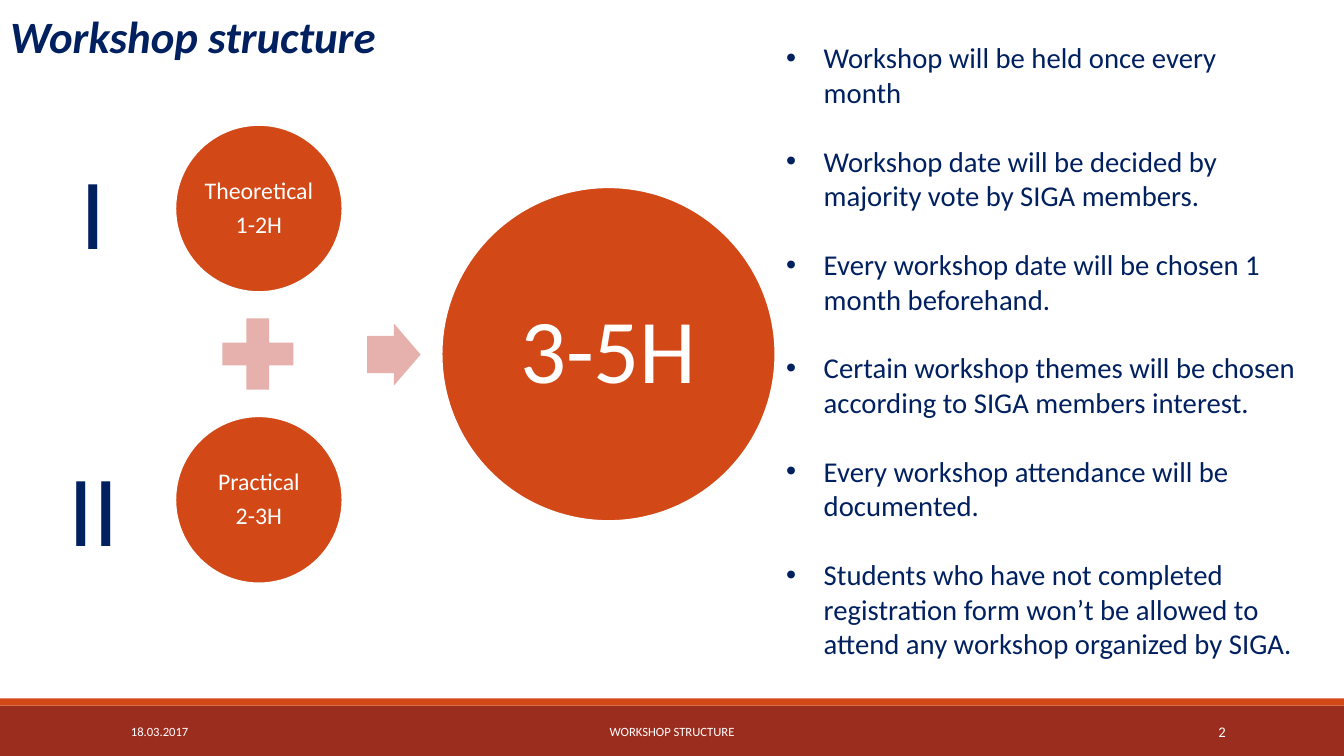
from lxml.etree import SubElement
from pptx import Presentation
from pptx.dml.color import RGBColor
from pptx.enum.shapes import MSO_SHAPE
from pptx.enum.text import MSO_ANCHOR, PP_ALIGN
from pptx.oxml.ns import qn
from pptx.util import Cm, Pt

NAVY, ORANGE, BRICK, PINK, WHITE = "002060", "D34817", "9B2D1F", "E6B1AC", "FFFFFF"
WIDTH, HEIGHT = 33.87, 19.05

PARTS = [("I", "Theoretical", "1-2H"), ("II", "Practical", "2-3H")]
RULES = [
    "Workshop will be held once every month",
    "Workshop date will be decided by majority vote by SIGA members.",
    "Every workshop date will be chosen 1 month beforehand.",
    "Certain workshop themes will be chosen according to SIGA members interest.",
    "Every workshop attendance will be documented.",
    "Students who have not completed registration form won’t be allowed to "
    "attend any workshop organized by SIGA.",
]
FOOTER = [
    ("18.03.2017", 3.05, 6.86, 9, PP_ALIGN.LEFT),
    ("WORKSHOP STRUCTURE", 10.24, 13.39, 9, PP_ALIGN.CENTER),
    ("2", 27.51, 3.63, 10.5, PP_ALIGN.RIGHT),
]


def color(value):
    return RGBColor.from_string(value)


def add_bullet(para, indent):
    properties = para._p.get_or_add_pPr()
    properties.set("marL", str(Cm(indent)))
    properties.set("indent", str(-Cm(indent)))
    SubElement(properties, qn("a:buFont"), typeface="Arial")
    SubElement(properties, qn("a:buChar"), char="•")


def write(frame, lines, size, ink=NAVY, align=PP_ALIGN.LEFT, anchor=MSO_ANCHOR.TOP,
          bold=False, italic=False, spacing=1.0, gap=0, indent=None, inset=None):
    """Fill a text frame with one paragraph per line; gap is the points between them."""
    frame.word_wrap = True
    frame.vertical_anchor = anchor
    if inset is not None:
        frame.margin_left = frame.margin_right = Cm(inset)
        frame.margin_top = frame.margin_bottom = Cm(inset)
    for index, line in enumerate(lines):
        para = frame.paragraphs[0] if index == 0 else frame.add_paragraph()
        para.alignment = align
        para.line_spacing = spacing
        para.space_before = Pt(gap if index else 0)
        if indent:
            add_bullet(para, indent)
        span = para.add_run()
        span.text = line
        span.font.name = "Calibri"
        span.font.size = Pt(size)
        span.font.bold = bold
        span.font.italic = italic
        span.font.color.rgb = color(ink)


class Page:
    def __init__(self, deck):
        self.slide = deck.slides.add_slide(deck.slide_layouts[5])

    def title(self, text, left, top, width, height):
        box = self.slide.shapes.title
        box.left, box.top, box.width, box.height = map(Cm, (left, top, width, height))
        write(box.text_frame, [text], 32, bold=True, italic=True)

    def text(self, lines, left, top, width, height, size, **style):
        box = self.slide.shapes.add_textbox(*map(Cm, (left, top, width, height)))
        write(box.text_frame, lines, size, **style)

    def shape(self, kind, left, top, width, height, fill):
        shape = self.slide.shapes.add_shape(kind, *map(Cm, (left, top, width, height)))
        shape.shadow.inherit = False
        shape.fill.solid()
        shape.fill.fore_color.rgb = color(fill)
        shape.line.fill.background()
        return shape

    def circle(self, lines, left, top, diameter, size, inset):
        circle = self.shape(MSO_SHAPE.OVAL, left, top, diameter, diameter, ORANGE)
        circle.line.color.rgb = color(WHITE)
        circle.line.width = Pt(1.25)
        write(circle.text_frame, lines, size, ink=WHITE, align=PP_ALIGN.CENTER,
              anchor=MSO_ANCHOR.MIDDLE, spacing=0.9, gap=0.35 * size, inset=inset)


def main():
    deck = Presentation()
    deck.slide_width, deck.slide_height = Cm(WIDTH), Cm(HEIGHT)
    page = Page(deck)

    page.shape(MSO_SHAPE.RECTANGLE, 0, 17.78, WIDTH, 1.27, BRICK)
    page.shape(MSO_SHAPE.RECTANGLE, 0, 17.6, WIDTH, 0.18, ORANGE)
    for text, left, width, size, align in FOOTER:
        page.text([text], left, 17.93, width, 1.02, size, ink=WHITE, align=align,
                  anchor=MSO_ANCHOR.MIDDLE)

    page.title("Workshop structure", 0, 0.08, 22.05, 1.63)

    for index, (numeral, name, hours) in enumerate(PARTS):
        page.text([numeral], 1.19, 3.63 + 7.47 * index, 2.34, 3.33, 72,
                  align=PP_ALIGN.CENTER)
        page.circle([name, hours], 4.42, 3.15 + 7.34 * index, 4.21, 17, 0.05)
    page.shape(MSO_SHAPE.MATH_PLUS, 5.28, 7.7, 2.44, 2.44, PINK)
    arrow = page.shape(MSO_SHAPE.RIGHT_ARROW, 9.25, 8.15, 1.35, 1.57, PINK)
    arrow.adjustments[0] = 0.6
    page.circle(["3-5H"], 11.13, 4.72, 8.41, 65, 0.23)

    page.text(RULES, 19.56, 0.89, 13.44, 16.92, 20.5, spacing=Pt(24.6), gap=24.6,
              indent=0.95)
    deck.save("out.pptx")


if __name__ == "__main__":
    main()
